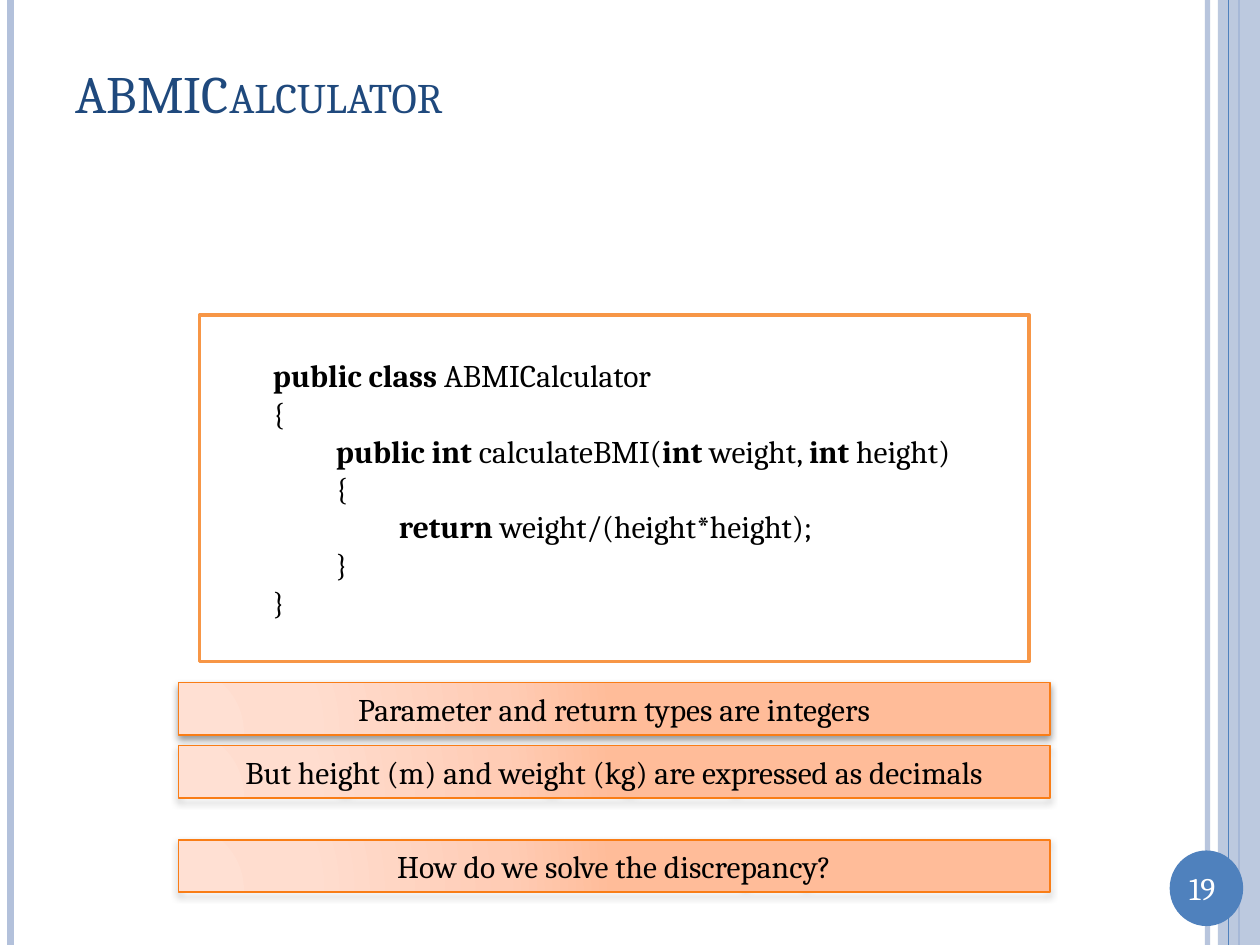
"""Build the ABMICalculator slide on a grid of 120 columns by 90 rows."""
from dataclasses import dataclass
from typing import NamedTuple

from lxml import etree
from pptx import Presentation
from pptx.dml.color import RGBColor
from pptx.enum.shapes import MSO_CONNECTOR, MSO_SHAPE
from pptx.enum.text import MSO_ANCHOR, MSO_AUTO_SIZE, PP_ALIGN
from pptx.oxml import parse_xml
from pptx.oxml.ns import nsdecls, qn
from pptx.util import Inches, Pt

RECT, OVAL = MSO_SHAPE.RECTANGLE, MSO_SHAPE.OVAL
LEFT, MID = PP_ALIGN.LEFT, PP_ALIGN.CENTER
TOP, CORE = MSO_ANCHOR.TOP, MSO_ANCHOR.MIDDLE
STRAIGHT = MSO_CONNECTOR.STRAIGHT
FIXED = MSO_AUTO_SIZE.NONE
TITLE_ONLY = 5
WIDE, HIGH = Inches(10), Inches(7.5)
COL, ROW = WIDE / 120, HIGH / 90


@dataclass(frozen=True)
class Theme:
    font: str = "Cambria"
    head: int = 30
    body: int = 18
    navy: str = "1F497D"
    blue: str = "4F81BD"
    pale: str = "B3C1DB"
    white: str = "FFFFFF"
    black: str = "000000"
    frame: str = "F79646"
    edge: str = "F97D16"
    glow: tuple = ((0, "FFE0D3"), (30, "FFDDCF"), (75, "FFCCB5"), (100, "FFBC99"))


class Box(NamedTuple):
    col: float
    row: float
    cols: float
    rows: float

    def place(self) -> tuple:
        return (round(self.col * COL), round(self.row * ROW),
                round(self.cols * COL), round(self.rows * ROW))


class Rule(NamedTuple):
    col: float
    tint: str
    width: float
    alpha: int = 100


class Line(NamedTuple):
    level: int
    words: tuple


class Note(NamedTuple):
    row: float
    text: str


THEME = Theme()
RULES = (Rule(115, THEME.pale, 3, 93), Rule(1, THEME.pale, 4.5),
         Rule(118, THEME.blue, 1.5))
THIN = Rule(117, THEME.blue, 0.75)
CODE = (
    Line(0, (("public class ", True), ("ABMICalculator", False))),
    Line(0, (("{", False),)),
    Line(1, (("public int ", True), ("calculateBMI(", False), ("int", True),
             (" weight, ", False), ("int", True), (" height)", False))),
    Line(1, (("{", False),)),
    Line(2, (("return", True), (" weight/(height*height);", False))),
    Line(1, (("}", False),)),
    Line(0, (("}", False),)),
)
NOTES = (
    Note(65, "Parameter and return types are integers"),
    Note(71, "But height (m) and weight (kg) are expressed as decimals"),
    Note(80, "How do we solve the discrepancy?"),
)


def plain(text: str) -> tuple:
    return (Line(0, ((text, False),)),)


def fade(fill, alpha: int) -> None:
    for tint in fill.iter(qn("a:srgbClr")):
        etree.SubElement(tint, qn("a:alpha")).set("val", str(alpha * 1000))


def write(shape, lines: tuple, tint: str, size: int, align=MID, anchor=CORE) -> None:
    frame = shape.text_frame
    form = {"word_wrap": True, "auto_size": FIXED, "vertical_anchor": anchor}
    for name, value in form.items():
        setattr(frame, name, value)
    for num, line in enumerate(lines):
        para = frame.add_paragraph() if num else frame.paragraphs[0]
        para.alignment = align
        if line.level:
            props = para._p.get_or_add_pPr()
            for name, value in {"marL": Inches(line.level / 2), "indent": 0}.items():
                props.set(name, str(value))
        for text, bold in line.words:
            run = para.add_run()
            run.text = text
            font = {"name": THEME.font, "size": Pt(size), "bold": bold}
            for name, value in font.items():
                setattr(run.font, name, value)
            run.font.color.rgb = RGBColor.from_string(tint)


def rule(slide, item: Rule) -> None:
    spot = round(item.col * COL)
    line = slide.shapes.add_connector(STRAIGHT, spot, 0, spot, HIGH)
    line.line.color.rgb = RGBColor.from_string(item.tint)
    line.line.width = Pt(item.width)
    props = line._element.spPr
    if item.alpha < 100:
        fade(props, item.alpha)
    etree.SubElement(props, qn("a:effectLst"))


def block(slide, box: Box, kind=RECT, fill: str = "", edge: str = "", width: float = 0):
    shape = slide.shapes.add_shape(kind, *box.place())
    shape.shadow.inherit = False
    if fill:
        shape.fill.solid()
        shape.fill.fore_color.rgb = RGBColor.from_string(fill)
    if edge:
        shape.line.color.rgb = RGBColor.from_string(edge)
        shape.line.width = Pt(width)
    else:
        shape.line.fill.background()
    return shape


def note(slide, item: Note) -> None:
    shape = block(slide, Box(17, item.row, 83, 5), edge=THEME.edge, width=1)
    stops = "".join(f'<a:gs pos="{pos * 1000}"><a:srgbClr val="{tint}"/></a:gs>'
                    for pos, tint in THEME.glow)
    glow = parse_xml(
        f'<a:gradFill {nsdecls("a")} rotWithShape="1"><a:gsLst>{stops}</a:gsLst>'
        '<a:path path="circle"><a:fillToRect l="5000" t="100000" r="120000" b="10000"/>'
        '</a:path></a:gradFill>')
    shade = parse_xml(
        f'<a:outerShdw {nsdecls("a")} blurRad="{Pt(4)}" dist="{Pt(2)}" dir="5400000" '
        f'rotWithShape="0"><a:srgbClr val="{THEME.black}"><a:alpha val="40000"/>'
        '</a:srgbClr></a:outerShdw>')
    props = shape._element.spPr
    props.find(qn("a:prstGeom")).addnext(glow)
    props.find(qn("a:effectLst")).append(shade)
    write(shape, plain(item.text), THEME.black, THEME.body)


def title(slide, text: str) -> None:
    shape = slide.shapes.title
    place = zip(("left", "top", "width", "height"), Box(6, 3.6, 104, 10.4).place())
    for name, value in place:
        setattr(shape, name, value)
    write(shape, plain(text), THEME.navy, THEME.head, LEFT)
    shape.text_frame.paragraphs[0].runs[0]._r.get_or_add_rPr().set("cap", "small")


def trim(slide) -> None:
    for item in RULES:
        rule(slide, item)
    band = block(slide, Box(116, 0, 4, 90), fill=THEME.pale)
    fade(band._element.spPr, 87)
    rule(slide, THIN)
    block(slide, Box(111.4, 81, 7, 7.2), OVAL, THEME.blue)
    label = slide.shapes.add_textbox(*Box(111, 82.2, 7, 4.8).place())
    write(label, plain("19"), THEME.white, THEME.body, anchor=TOP)


def main() -> None:
    deck = Presentation()
    deck.slide_width, deck.slide_height = WIDE, HIGH
    slide = deck.slides.add_slide(deck.slide_layouts[TITLE_ONLY])
    trim(slide)
    title(slide, "ABMICalculator")
    code = block(slide, Box(19, 30, 79, 33), fill=THEME.white, edge=THEME.frame, width=2)
    code.text_frame.margin_left = round(7 * COL)
    write(code, CODE, THEME.black, THEME.body, LEFT)
    for item in NOTES:
        note(slide, item)
    deck.save("out.pptx")


if __name__ == "__main__":
    main()
